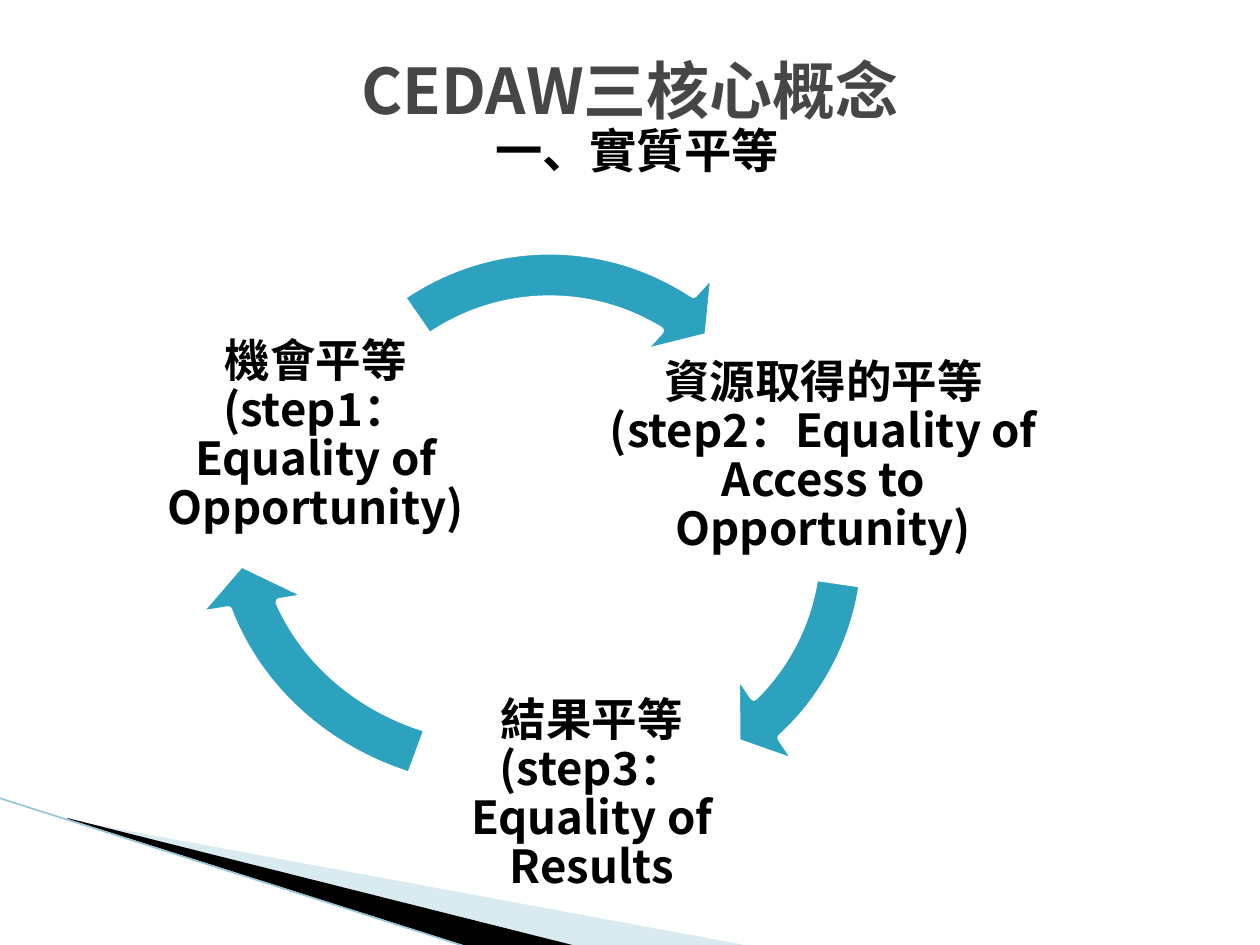
from dataclasses import dataclass

from lxml.etree import SubElement
from pptx import Presentation
from pptx.dml.color import RGBColor
from pptx.enum.shapes import MSO_CONNECTOR, MSO_SHAPE
from pptx.enum.text import MSO_ANCHOR, PP_ALIGN
from pptx.oxml.ns import qn
from pptx.util import Emu, Pt

PX = 914400 / 126
FONT = "Noto Sans CJK SC"
BLACK = RGBColor(0x00, 0x00, 0x00)
WHITE = RGBColor(0xFF, 0xFF, 0xFF)
GREY = RGBColor(0x46, 0x46, 0x46)
TEAL = RGBColor(0x2D, 0xA2, 0xBF)
PALE_BLUE = RGBColor(0xA0, 0xCB, 0xDC)
EDGE_BLUE = RGBColor(0x97, 0xC5, 0xD8)


@dataclass(frozen=True)
class Box:
    left: int
    top: int
    width: int
    height: int

    def emu(self) -> tuple:
        return tuple(px(v) for v in (self.left, self.top, self.width, self.height))


@dataclass(frozen=True)
class Step:
    text: str
    text_box: Box
    arrow_box: Box
    arrow_end: float
    arrow_start: float


STEPS = [
    Step("資源取得的平等(step2：Equality of Access to Opportunity)",
         Box(600, 334, 447, 247), Box(314, 255, 583, 583), 27.94, 4.98),
    Step("結果平等(step3：Equality of Results",
         Box(445, 672, 294, 247), Box(179, 219, 650, 604), 96.75, 66.09),
    Step("機會平等(step1：Equality of Opportunity)",
         Box(140, 314, 352, 244), Box(258, 219, 583, 583), 181.65, 141.16),
]


def px(value: int) -> Emu:
    return Emu(round(value * PX))


def write(shape, text: str, size: int, color: RGBColor, inset: int,
          anchor=MSO_ANCHOR.MIDDLE, spacing: float = 1.0) -> None:
    frame = shape.text_frame
    frame.text = text
    frame.word_wrap = True
    frame.vertical_anchor = anchor
    frame.margin_left = frame.margin_right = px(inset)
    frame.margin_top = frame.margin_bottom = px(inset)
    paragraph = frame.paragraphs[0]
    paragraph.alignment = PP_ALIGN.CENTER
    paragraph.line_spacing = spacing
    for run in paragraph.runs:
        run.font.size = Pt(size)
        run.font.bold = True
        run.font.name = FONT
        run.font.color.rgb = color
        SubElement(run.font._element, qn("a:ea")).set("typeface", FONT)


def draw_wedge(slide, points: list, color: RGBColor, opacity: int = 100) -> None:
    builder = slide.shapes.build_freeform(*points[0], scale=PX)
    builder.add_line_segments(points[1:], close=True)
    wedge = builder.convert_to_shape()
    wedge.shadow.inherit = False
    wedge.fill.solid()
    wedge.fill.fore_color.rgb = color
    wedge.line.fill.background()
    if opacity < 100:
        fill_color = wedge._element.spPr.find(qn("a:solidFill"))[0]
        SubElement(fill_color, qn("a:alpha")).set("val", str(opacity * 1000))


def draw_step(slide, step: Step) -> None:
    label = slide.shapes.add_textbox(*step.text_box.emu())
    write(label, step.text, 26, BLACK, inset=5, spacing=0.9)
    arrow = slide.shapes.add_shape(MSO_SHAPE.CIRCULAR_ARROW, *step.arrow_box.emu())
    shape_values = (0.083, 5.763, step.arrow_end, step.arrow_start, 0.096)
    for index, value in enumerate(shape_values):
        arrow.adjustments[index] = value
    arrow.shadow.inherit = False
    arrow.fill.solid()
    arrow.fill.fore_color.rgb = TEAL
    arrow.line.color.rgb = WHITE
    arrow.line.width = Pt(4.33)


def main() -> None:
    deck = Presentation()
    deck.slide_width, deck.slide_height = px(1260), px(945)
    slide = deck.slides.add_slide(deck.slide_layouts[5])

    # Corner decoration
    draw_wedge(slide, [(69, 820), (750, 946), (575, 946), (69, 819)], PALE_BLUE, 40)
    draw_wedge(slide, [(67, 818), (576, 946), (469, 947), (68, 819)], BLACK)
    edge = slide.shapes.add_connector(
        MSO_CONNECTOR.STRAIGHT, px(-1), px(798), px(467), px(947))
    edge.line.color.rgb = EDGE_BLUE
    edge.line.width = Pt(0.95)
    SubElement(edge._element.spPr, qn("a:effectLst"))

    # Title and subtitle
    title = slide.shapes.title
    title.left, title.top, title.width, title.height = Box(63, 63, 1134, 52).emu()
    write(title, "CEDAW三核心概念", 36, GREY, inset=6)
    subtitle = slide.shapes.add_textbox(*Box(70, 121, 1134, 76).emu())
    write(subtitle, "一、實質平等", 27, BLACK, inset=0, anchor=MSO_ANCHOR.TOP)

    # Cycle of three steps
    for step in STEPS:
        draw_step(slide, step)

    deck.save("out.pptx")


if __name__ == "__main__":
    main()
